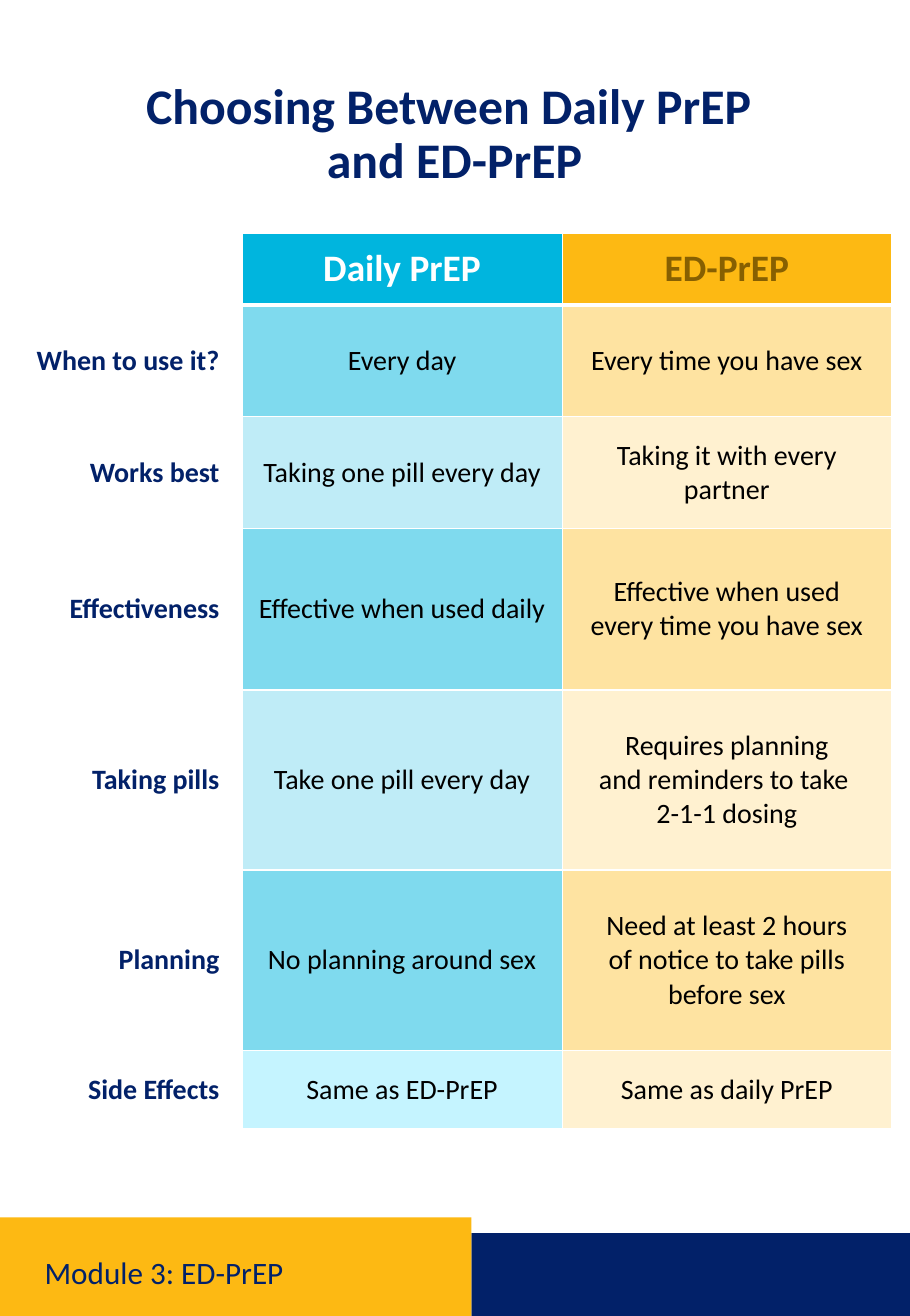
"""Build the slide that compares daily PrEP with ED-PrEP."""
from lxml import etree
from pptx import Presentation
from pptx.dml.color import RGBColor
from pptx.enum.shapes import MSO_SHAPE
from pptx.enum.text import MSO_ANCHOR, PP_ALIGN
from pptx.oxml.ns import qn
from pptx.util import Inches, Pt

RECTANGLE = MSO_SHAPE.RECTANGLE
MIDDLE = MSO_ANCHOR.MIDDLE
TOP = MSO_ANCHOR.TOP
LEFT, CENTER, RIGHT = PP_ALIGN.LEFT, PP_ALIGN.CENTER, PP_ALIGN.RIGHT

NAVY = RGBColor(0x02, 0x21, 0x69)
GOLD = RGBColor(0xFD, 0xB9, 0x13)
CYAN = RGBColor(0x00, 0xB5, 0xDE)
BROWN = RGBColor(0x87, 0x60, 0x01)
WHITE = RGBColor(0xFF, 0xFF, 0xFF)
BLACK = RGBColor(0x00, 0x00, 0x00)
MID_CYAN = RGBColor(0x7F, 0xDA, 0xEE)
LIGHT_CYAN = RGBColor(0xBF, 0xEC, 0xF7)
ICE_CYAN = RGBColor(0xC5, 0xF4, 0xFF)
MID_GOLD = RGBColor(0xFE, 0xE3, 0xA1)
LIGHT_GOLD = RGBColor(0xFF, 0xF1, 0xD0)

HARD_SPACE = chr(160)
SLIDE_WIDTH = 8 + 1 / 8
SLIDE_HEIGHT = 11.75
COLUMN_WIDTHS = [2.16, 2.86, 2.94]
ROW_HEIGHTS = [0.64, 1, 1, 1.44, 1.61, 1.61, 0.7]
ROWS = [
    ("", "Daily~PrEP", "ED-PrEP"),
    ("When to~use it?", "Every day", "Every time you have sex"),
    ("Works best", "Taking one pill every day", "Taking it with every partner"),
    ("Effectiveness", "Effective when used daily", "Effective when used every~time you have sex"),
    ("Taking pills", "Take one pill every day", "Requires planning and~reminders to take \n2-1-1~dosing"),
    ("Planning", "No planning around sex", "Need at least 2 hours of~notice to take pills before~sex"),
    ("Side Effects", "Same as ED-PrEP", "Same as daily~PrEP"),
]


def write_text(frame, lines, size, color, bold, alignment, spacing=1.0):
    """Fill a text frame, one paragraph for each line; a vertical tab breaks a line, a tilde is a hard space."""
    for index, line in enumerate(lines):
        paragraph = frame.add_paragraph() if index else frame.paragraphs[0]
        paragraph.alignment = alignment
        paragraph.line_spacing = spacing
        for part_index, part in enumerate(line.split("|")):
            if part_index:
                paragraph.add_line_break()
            run = paragraph.add_run()
            run.text = part.replace("~", HARD_SPACE)
            run.font.name = "Calibri"
            run.font.size = Pt(size)
            run.font.bold = bold
            run.font.color.rgb = color


def make_border(side, points):
    """Make one white border of a table cell."""
    line = etree.Element(qn("a:" + side), w=str(Pt(points)))
    fill = etree.SubElement(line, qn("a:solidFill"))
    etree.SubElement(fill, qn("a:srgbClr"), val=str(WHITE))
    return line


presentation = Presentation()
presentation.slide_width = Inches(SLIDE_WIDTH)
presentation.slide_height = Inches(SLIDE_HEIGHT)
slide = presentation.slides.add_slide(presentation.slide_layouts[6])

for left, top, right, color in [(4.21, 11.01, SLIDE_WIDTH, NAVY), (0, 10.87, 4.21, GOLD)]:
    band = slide.shapes.add_shape(
        RECTANGLE, Inches(left), Inches(top), Inches(right - left), Inches(SLIDE_HEIGHT - top)
    )
    band.shadow.inherit = False
    band.fill.solid()
    band.fill.fore_color.rgb = color
    band.line.fill.background()

for left, top, width, height, text, size, bold, alignment, anchor in [
    (0.61, 0.68, 6.9, 0.81, "Choosing Between Daily PrEP |and ED-PrEP", 32, True, CENTER, TOP),
    (0.3, 11.13, 3.59, 0.5, "Module 3: ED-PrEP", 20, False, LEFT, MIDDLE),
]:
    box = slide.shapes.add_textbox(Inches(left), Inches(top), Inches(width), Inches(height))
    box.text_frame.word_wrap = True
    box.text_frame.vertical_anchor = anchor
    write_text(box.text_frame, [text], size, NAVY, bold, alignment, 0.9)

table = slide.shapes.add_table(
    len(ROWS), len(COLUMN_WIDTHS), Inches(0), Inches(2.08), Inches(sum(COLUMN_WIDTHS)), Inches(sum(ROW_HEIGHTS))
).table
table.first_row = False
table.horz_banding = False
for column, width in zip(table.columns, COLUMN_WIDTHS):
    column.width = Inches(width)
for row, height in zip(table.rows, ROW_HEIGHTS):
    row.height = Inches(height)

for row_index, texts in enumerate(ROWS):
    is_header = row_index == 0
    if is_header:
        fills = (None, CYAN, GOLD)
    elif row_index % 2:
        fills = (None, MID_CYAN, MID_GOLD)
    else:
        is_last = row_index == len(ROWS) - 1
        fills = (None, ICE_CYAN if is_last else LIGHT_CYAN, LIGHT_GOLD)
    text_colors = (NAVY, WHITE, BROWN) if is_header else (NAVY, BLACK, BLACK)
    for column_index, text in enumerate(texts):
        is_label = column_index == 0
        cell = table.cell(row_index, column_index)
        cell.vertical_anchor = MIDDLE
        cell.margin_left = Inches(0.09)
        cell.margin_right = Inches(0.2 if is_label else 0.09)
        cell.margin_top = cell.margin_bottom = Inches(0.04)
        if text:
            write_text(
                cell.text_frame, text.split("\n"), 24 if is_header else 18, text_colors[column_index],
                is_header or is_label, RIGHT if is_label else CENTER,
            )
        if is_label:
            cell.fill.background()
        else:
            cell.fill.solid()
            cell.fill.fore_color.rgb = fills[column_index]
        borders = {"lnL": 1, "lnR": 1, "lnT": 3 if row_index == 1 else 1, "lnB": 3 if is_header else 1}
        properties = cell._tc.get_or_add_tcPr()
        for position, (side, points) in enumerate(borders.items()):
            properties.insert(position, make_border(side, points))

presentation.save("out.pptx")
